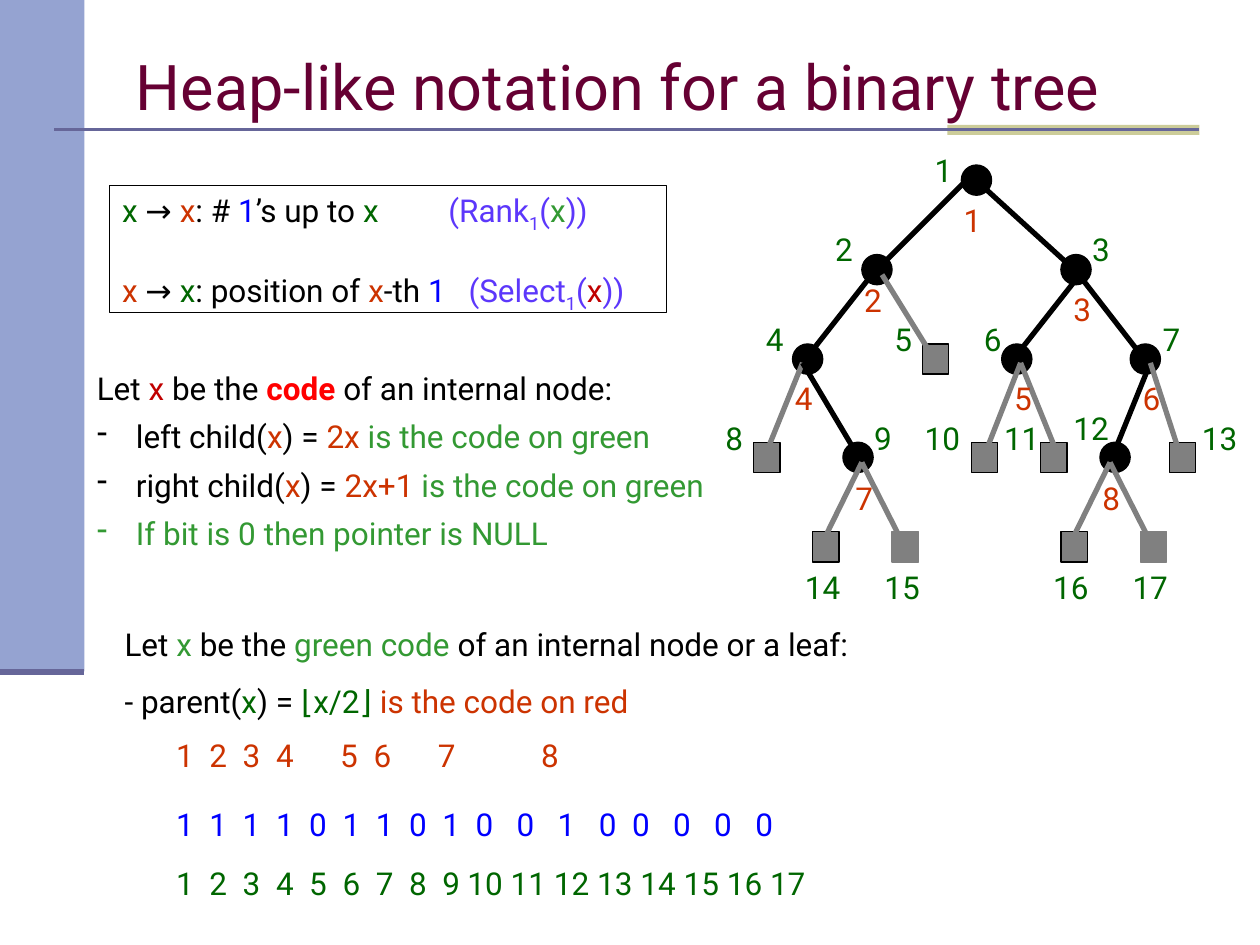
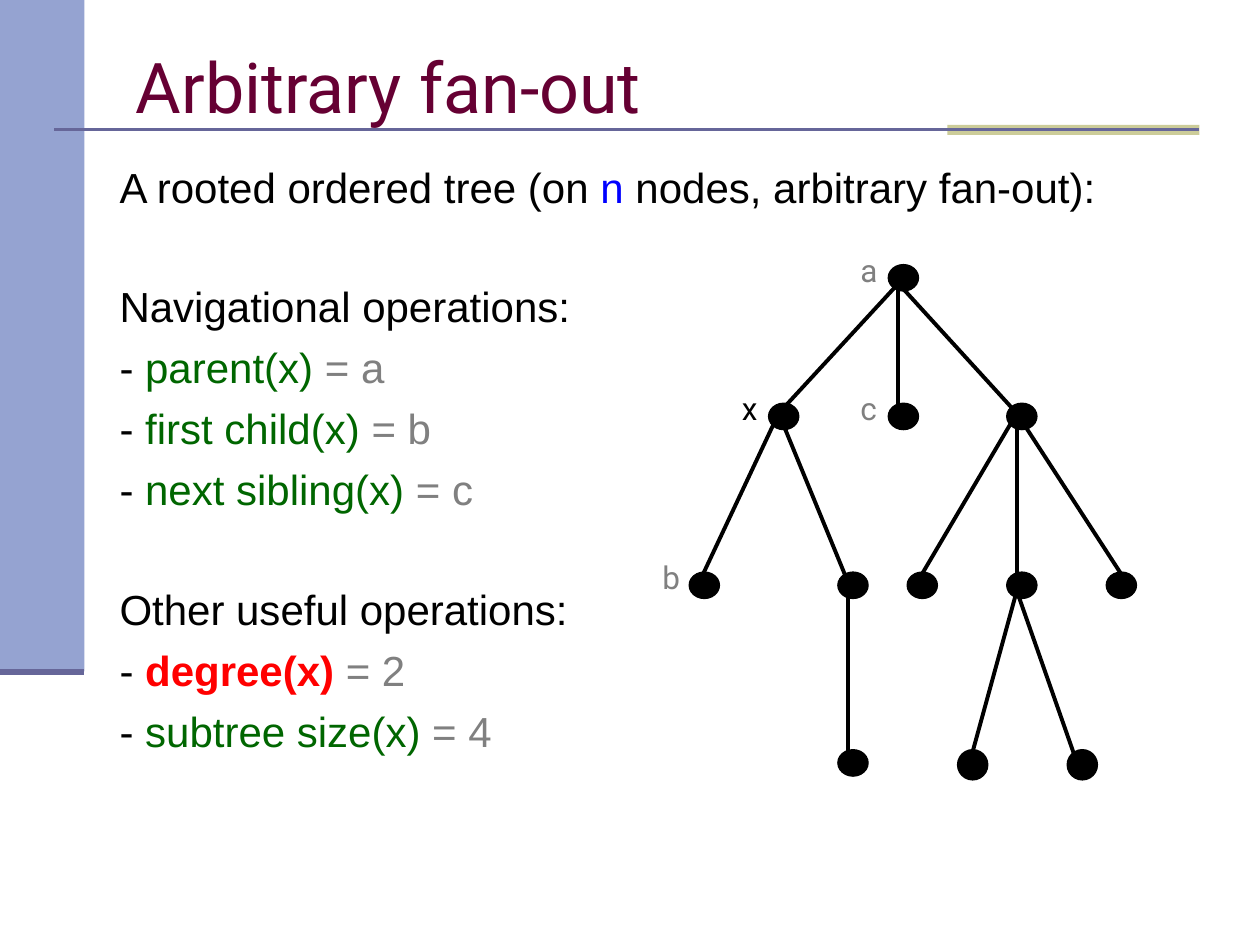
from dataclasses import dataclass
from itertools import accumulate
from typing import NamedTuple

import pptx
import pptx.dml.color
import pptx.enum.shapes
import pptx.enum.text
import pptx.oxml.ns
import pptx.util
from lxml import etree
from pptx.util import Inches, Pt

SHAPE = pptx.enum.shapes.MSO_SHAPE


@dataclass(frozen=True)
class Theme:
    black: str = "000000"
    band: str = "95A3D1"
    rule: str = "666699"
    accent: str = "CCCC99"
    title: str = "660033"
    code: str = "006600"
    green: str = "339933"
    rank: str = "CC3300"
    variable: str = "C00000"
    strong: str = "FF0000"
    bit: str = "0000FF"
    function: str = "5C37FB"
    grey: str = "808080"
    font: str = "Roboto"
    body_font: str = "Arial"
    small: float = 18
    body: float = 24
    title_small: float = 36
    title_large: float = 40


T = Theme()


class Run(NamedTuple):
    text: str
    color: str = T.black
    bold: bool = False
    subscript: bool = False


class Para(NamedTuple):
    runs: list[Run]
    before: float = 0
    line: float = 1
    dash: bool = False
    tabs: tuple[float, ...] = ()


class Edge(NamedTuple):
    x1: float
    y1: float
    x2: float
    y2: float


class Node(NamedTuple):
    left: float
    top: float
    label_at: tuple[float, float]
    edge: Edge | None = None
    rank_at: tuple[float, float] | None = None  # internal nodes only
    outline: str = T.black


class Label(NamedTuple):
    text: str
    left: float
    top: float
    color: str = T.grey


def rgb(color: str) -> pptx.dml.color.RGBColor:
    return pptx.dml.color.RGBColor.from_string(color)


def add_xml(parent, tag: str, **attributes: str):
    return etree.SubElement(parent, pptx.oxml.ns.qn(tag), attributes)


def write(paragraph, text: str, *, color: str = T.black, size: float = T.small,
          font: str = T.font, bold: bool = False, subscript: bool = False) -> None:
    run = paragraph.add_run()
    run.text = text
    run.font.name = font
    run.font.size = Pt(size)
    run.font.bold = bold
    run.font.color.rgb = rgb(color)
    if subscript:
        run.font._element.set("baseline", "-25000")


def fill_frame(frame, paras: list[Para], *, size: float = T.small, font: str = T.font,
               anchor=pptx.enum.text.MSO_ANCHOR.TOP) -> None:
    frame.word_wrap = True
    frame.vertical_anchor = anchor
    for index, para in enumerate(paras):
        paragraph = frame.add_paragraph() if index else frame.paragraphs[0]
        paragraph.alignment = pptx.enum.text.PP_ALIGN.LEFT
        paragraph.space_before = Pt(para.before)
        paragraph.line_spacing = para.line
        properties = paragraph._p.get_or_add_pPr()
        if para.dash:
            properties.set("marL", str(Inches(0.31)))
            properties.set("indent", str(-Inches(0.31)))
            add_xml(properties, "a:buChar", char="-")
        if para.tabs:
            stops = add_xml(properties, "a:tabLst")
            for position in para.tabs:
                add_xml(stops, "a:tab", pos=str(Inches(position)), algn="l")
        for run in para.runs:
            write(paragraph, run.text, color=run.color, size=size, font=font,
                  bold=run.bold, subscript=run.subscript)


def add_text(slide, left: float, top: float, width: float, height: float,
             paras: list[Para], **format) -> None:
    box = slide.shapes.add_textbox(Inches(left), Inches(top), Inches(width), Inches(height))
    fill_frame(box.text_frame, paras, **format)


def add_label(slide, text: str, left: float, top: float, color: str) -> None:
    width = 0.36 if len(text) == 1 else 0.52
    add_text(slide, left, top, width, 0.4, [Para([Run(text, color)])])


def add_figure(slide, kind, left: float, top: float, width: float, height: float, *,
               fill: str | None = None, outline: str | None = None):
    figure = slide.shapes.add_shape(kind, Inches(left), Inches(top), Inches(width), Inches(height))
    figure.shadow.inherit = False
    if fill:
        figure.fill.solid()
        figure.fill.fore_color.rgb = rgb(fill)
    else:
        figure.fill.background()
    if outline:
        figure.line.color.rgb = rgb(outline)
        figure.line.width = Pt(0.75)
    else:
        figure.line.fill.background()
    return figure


def add_line(slide, edge: Edge, color: str, width: float) -> None:
    line = slide.shapes.add_connector(pptx.enum.shapes.MSO_CONNECTOR.STRAIGHT,
                                      *(Inches(value) for value in edge))
    line.line.color.rgb = rgb(color)
    line.line.width = Pt(width)
    add_xml(line._element.spPr, "a:effectLst")


def start_slide(deck, title: str, title_size: float):
    """Add a blank slide with the side band, the title and its rule."""
    slide = deck.slides.add_slide(deck.slide_layouts[6])
    add_figure(slide, SHAPE.RECTANGLE, 0, 0, 0.67, 5.33, fill=T.band)
    add_figure(slide, SHAPE.RECTANGLE, 7.52, 0.99, 2, 0.08, fill=T.accent)
    add_line(slide, Edge(0.43, 1.03, 9.52, 1.03), T.rule, 1.5)
    add_line(slide, Edge(0, 5.33, 0.67, 5.33), T.rule, 3.5)
    add_text(slide, 0.98, 0.28, 8.5, 0.79, [Para([Run(title, T.title)])],
             size=title_size, anchor=pptx.enum.text.MSO_ANCHOR.MIDDLE)
    return slide


# Nodes in level order, so that the n-th one has code n.
HEAP = [
    Node(7.63, 1.31, (7.32, 1.15), None, (7.55, 1.55)),
    Node(6.84, 2.02, (6.53, 1.78), Edge(7.71, 1.39, 6.92, 2.18), (6.76, 2.18)),
    Node(8.42, 2.02, (8.57, 1.78), Edge(7.79, 1.47, 8.57, 2.18), (8.42, 2.25)),
    Node(6.29, 2.73, (5.98, 2.49), Edge(6.92, 2.18, 6.37, 2.88), (6.21, 2.96)),
    Node(7.32, 2.73, (7, 2.49), Edge(7, 2.18, 7.39, 2.81)),
    Node(7.95, 2.73, (7.71, 2.49), Edge(8.57, 2.18, 8.02, 2.88), (7.95, 2.96)),
    Node(8.97, 2.73, (9.13, 2.49), Edge(8.5, 2.1, 9.05, 2.81), (8.97, 2.96)),
    Node(5.98, 3.51, (5.66, 3.28), Edge(6.37, 2.88, 6.05, 3.67)),
    Node(6.69, 3.51, (6.84, 3.28), Edge(6.37, 2.88, 6.84, 3.67), (6.69, 3.75)),
    Node(7.71, 3.51, (7.24, 3.28), Edge(8.1, 2.88, 7.79, 3.67)),
    Node(8.26, 3.51, (7.87, 3.28), Edge(8.1, 2.88, 8.42, 3.67)),
    Node(8.73, 3.51, (8.42, 3.2), Edge(9.13, 2.88, 8.81, 3.67), (8.65, 3.75)),
    Node(9.28, 3.51, (9.44, 3.28), Edge(9.13, 2.88, 9.36, 3.59)),
    Node(6.45, 4.22, (6.29, 4.46), Edge(6.84, 3.67, 6.53, 4.3)),
    Node(7.08, 4.22, (6.92, 4.46), Edge(6.84, 3.67, 7.16, 4.3), outline=T.grey),
    Node(8.42, 4.22, (8.26, 4.46), Edge(8.81, 3.67, 8.5, 4.3)),
    Node(9.05, 4.22, (8.89, 4.46), Edge(8.81, 3.67, 9.13, 4.3), outline=T.grey),
]


def draw_heap(slide) -> None:
    for node in HEAP:
        if node.rank_at:
            add_figure(slide, SHAPE.OVAL, node.left, node.top, 0.24, 0.24,
                       fill=T.black, outline=node.outline)
        else:
            add_figure(slide, SHAPE.RECTANGLE, node.left, node.top, 0.21, 0.24,
                       fill=T.grey, outline=node.outline)
    for node in HEAP:
        if node.edge:
            add_line(slide, node.edge, T.black if node.rank_at else T.grey, 3)
    for code, node in enumerate(HEAP, 1):
        add_label(slide, str(code), *node.label_at, T.code)
    internal = [node for node in HEAP if node.rank_at]
    for rank, node in enumerate(internal, 1):
        add_label(slide, str(rank), *node.rank_at, T.rank)


def add_sequence(slide, top: float, values: list[str], steps: list[float], color: str) -> None:
    """Write values in a row, each one a step to the right of the one before."""
    row = Para([Run("\t".join(values), color)], tabs=tuple(accumulate(steps)))
    add_text(slide, 1.3, top, 6.41, 0.4, [row])


def heap_slide(deck) -> None:
    slide = start_slide(deck, "Heap-like notation for a binary tree", T.title_small)
    draw_heap(slide)

    near, far = 0.264, 0.326
    ranks = [str(rank) for rank in range(1, sum(1 for n in HEAP if n.rank_at) + 1)]
    bits = ["1" if node.rank_at else "0" for node in HEAP]
    codes = [str(code) for code in range(1, len(HEAP) + 1)]
    add_sequence(slide, 5.79, ranks, [near] * 3 + [0.51, near, 0.51, 0.82], T.rank)
    add_sequence(slide, 6.34, bits, [near] * 9 + [far] * 3 + [near] + [far] * 3, T.bit)
    add_sequence(slide, 6.81, codes, [near] * 8 + [0.2] + [0.343] * 7, T.code)

    add_text(slide, 0.89, 4.91, 6.22, 0.81, [
        Para([Run("Let "), Run("x", T.green), Run(" be the "), Run("green code ", T.green),
              Run("of an internal node or a leaf:")]),
        Para([Run("- parent("), Run("x", T.code), Run(") = "), Run("⌊x/2⌋", T.code),
              Run(" is the code on red", T.rank)], line=1.5),
    ])
    children = [
        Para([Run(f"{side} child("), Run("x", T.rank), Run(") = "), Run(f"{formula} ", T.rank),
              Run("is the code on green", T.green)], before=6, dash=True)
        for side, formula in (("left", "2x"), ("right", "2x+1"))
    ]
    add_text(slide, 0.67, 2.88, 5.42, 1.57, [
        Para([Run("Let "), Run("x", T.variable), Run(" be the "),
              Run("code", T.strong, bold=True), Run(" of an internal node:")], before=6),
        *children,
        Para([Run("If bit is 0 then pointer is NULL", T.green)], before=6, dash=True),
    ])

    def call(name: str, argument_color: str) -> list[Run]:
        return [Run(f"\t({name}", T.function), Run("1", T.function, subscript=True),
                Run("(", T.function), Run("x", argument_color), Run("))", T.function)]

    mapping = add_figure(slide, SHAPE.RECTANGLE, 0.87, 1.47, 4.42, 1.01, outline=T.black)
    fill_frame(mapping.text_frame, [
        Para([Run("x ", T.code), Run("→ "), Run("x", T.rank), Run(": # "), Run("1", T.bit),
              Run("’s up to "), Run("x", T.code), *call("Rank", T.green)], tabs=(2.59,)),
        Para([Run("x ", T.rank), Run("→ "), Run("x", T.code), Run(": position of "),
              Run("x", T.rank), Run("-th "), Run("1", T.bit), *call("Select", T.variable)],
             before=21, tabs=(2.75,)),
    ])


# Each level of the ordered tree: top, node height, left edges.
LEVELS = [
    (2.1, 0.21, (7.05,)),
    (3.2, 0.21, (6.1, 7.05, 7.99)),
    (4.54, 0.21, (5.47, 6.65, 7.2, 7.99, 8.78)),
    (5.95, 0.21, (6.65,)),
    (5.95, 0.24, (7.6, 8.47)),
]
# Each parent's joint with the joints of its children.
BRANCHES = {
    (7.13, 2.25): [(6.18, 3.28), (7.13, 3.28), (8.07, 3.28)],
    (6.18, 3.28): [(5.55, 4.62), (6.73, 4.62)],
    (8.07, 3.28): [(7.28, 4.62), (8.07, 4.62), (8.94, 4.62)],
    (6.73, 4.69): [(6.73, 6.03)],
    (8.07, 4.69): [(7.68, 6.11), (8.54, 6.03)],
}
NODE_NAMES = [Label("x", 5.79, 3.04, T.black), Label("a", 6.73, 1.94),
              Label("b", 5.16, 4.38), Label("c", 6.73, 3.04)]


def fan_out_slide(deck) -> None:
    slide = start_slide(deck, "Arbitrary fan-out", T.title_large)
    gap, section_gap = 6, 39.6

    def operation(name: str, result: str, color: str = T.code, bold: bool = False) -> Para:
        return Para([Run("- "), Run(f"{name}(x) ", color, bold), Run(f"= {result}", T.grey)], gap)

    add_text(slide, 0.85, 1.23, 8.98, 5.75, [
        Para([Run("A rooted ordered tree (on "), Run("n", T.bit),
              Run(" nodes, arbitrary fan-out):")], gap),
        Para([Run("Navigational operations:")], section_gap),
        operation("parent", "a"),
        operation("first child", "b"),
        operation("next sibling", "c"),
        Para([Run("Other useful operations:")], section_gap),
        operation("degree", "2", T.strong, True),
        operation("subtree size", "4"),
    ], size=T.body, font=T.body_font)

    for top, height, lefts in LEVELS:
        for left in lefts:
            add_figure(slide, SHAPE.OVAL, left, top, 0.24, height, fill=T.black, outline=T.black)
    for parent, children in BRANCHES.items():
        for child in children:
            add_line(slide, Edge(*parent, *child), T.black, 2.25)
    for name in NODE_NAMES:
        add_label(slide, *name)


def main() -> None:
    deck = pptx.Presentation()
    deck.slide_width, deck.slide_height = Inches(10), Inches(7.5)
    heap_slide(deck)
    fan_out_slide(deck)
    deck.save("out.pptx")


if __name__ == "__main__":
    main()
